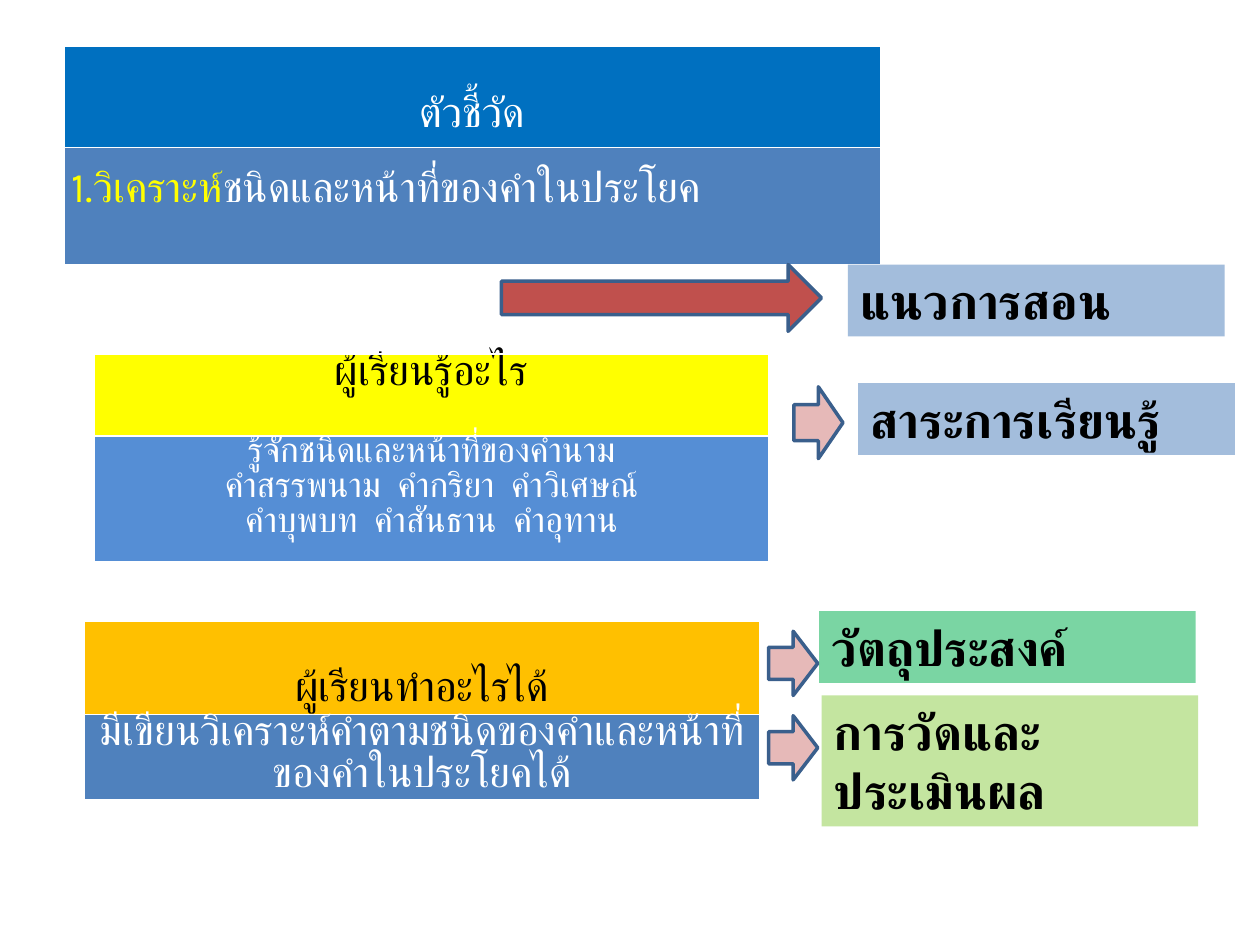
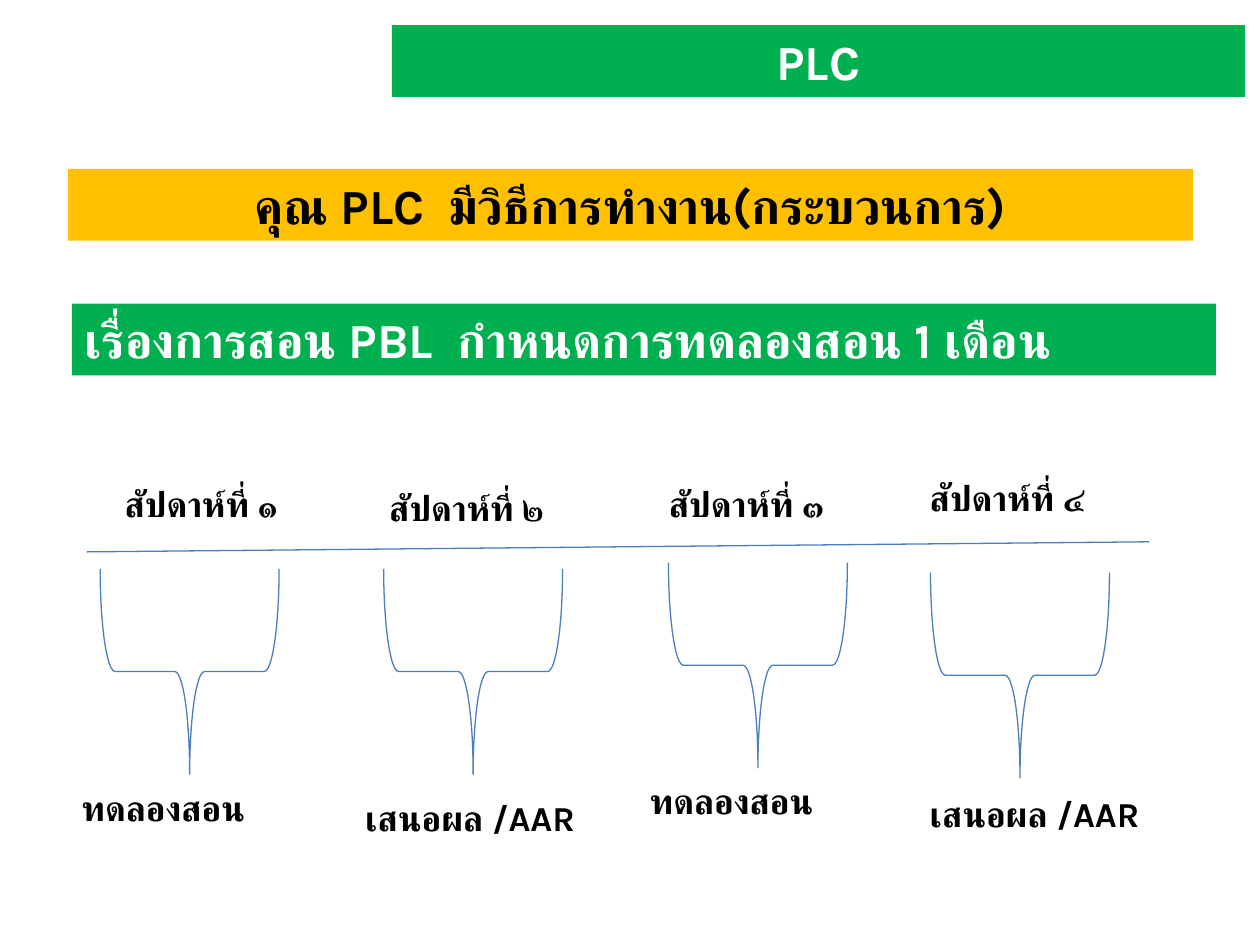
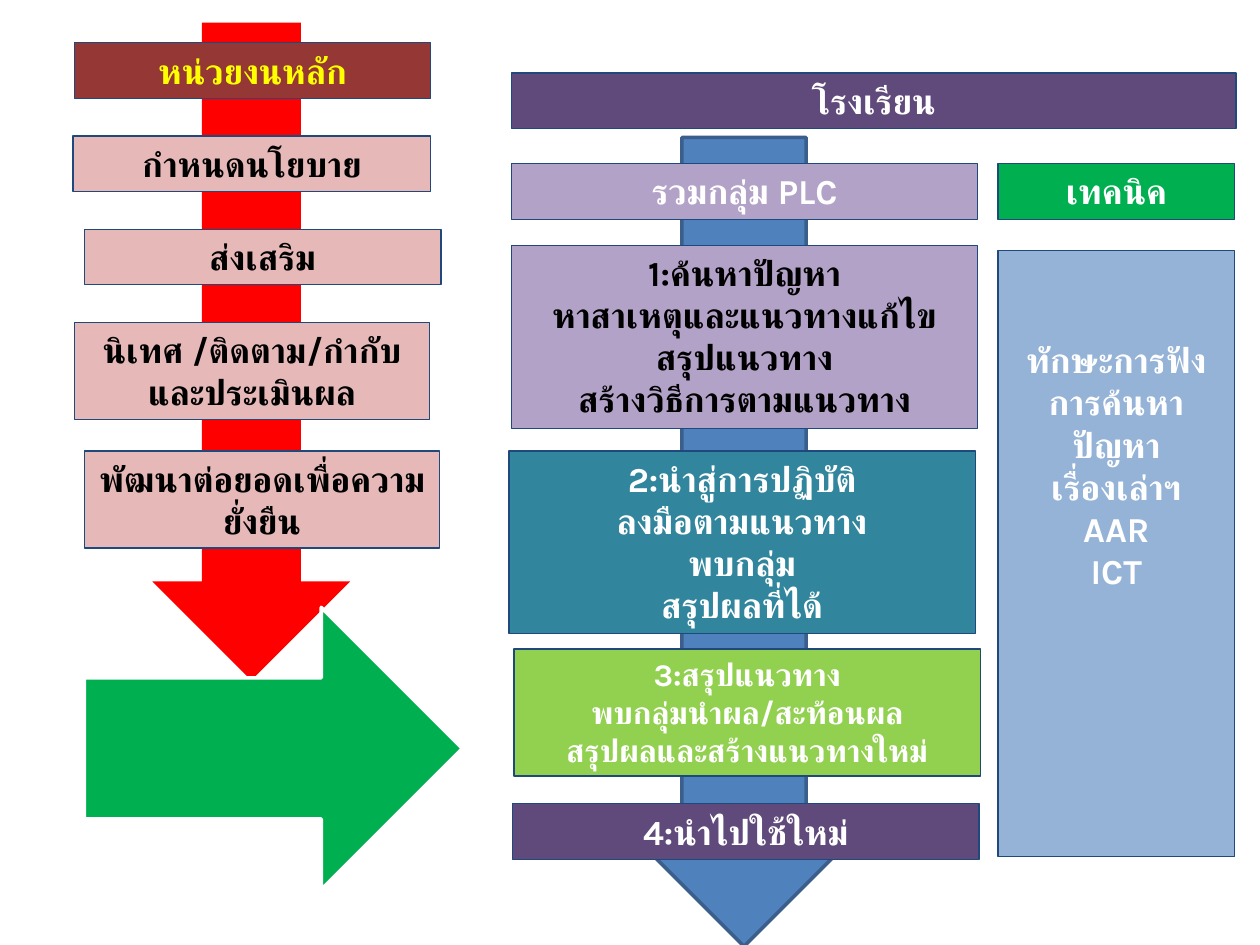
from lxml.etree import SubElement
from pptx import Presentation
from pptx.dml.color import RGBColor
from pptx.enum.shapes import MSO_CONNECTOR, MSO_SHAPE as Shape
from pptx.enum.text import MSO_ANCHOR, PP_ALIGN as Align
from pptx.oxml import parse_xml
from pptx.oxml.ns import nsdecls, qn
from pptx.util import Inches, Pt

FONT = "Karla"
WHITE, BLACK, YELLOW = "FFFFFF", "000000", "FFFF00"
BLUE, GREEN, ORANGE, LIME = "4F81BD", "00B050", "FFC000", "92D050"
PINK, PURPLE, LILAC = "E6B9B8", "604A7B", "B3A2C7"
ARROW_EDGE, BOX_EDGE, TIMELINE = "3A5F8C", "1F497D", "4B7EBC"

# Slide 1: place (left, top, width), then header and body rows
INDICATOR_TABLES = [
    ((0.51, 0.37, 6.48), [
        dict(text="ตัวชี้วัด", height=0.8, fill="0070C0", top=0.39),
        dict(text=[[("1.วิเคราะห์", YELLOW), ("ชนิดและหน้าที่ของคำในประโยค", WHITE)]],
             height=0.93, fill=BLUE, top=0.26, spacing=19, align=Align.LEFT)]),
    ((0.75, 2.81, 5.35), [
        dict(text="ผู้เรียนรู้อะไร", height=0.65, fill=YELLOW, color=BLACK),
        dict(text=["รู้จักชนิดและหน้าที่ของคำนาม",
                   "คำสรรพนาม  คำกริยา  คำวิเศษณ์\vคำบุพบท  คำสันธาน  คำอุทาน"],
             height=1, fill="558ED5", size=20)]),
    ((0.67, 4.93, 5.36), [
        dict(text="ผู้เรียนทำอะไรได้", height=0.74, fill=ORANGE, color=BLACK, top=0.39),
        dict(text="มีเขียนวิเคราะห์คำตามชนิดของคำและหน้าที่ของคำในประโยคได้",
             height=0.68, fill=BLUE)]),
]
PLAN_PARTS = [  # text, place, fill, opacity in percent
    ("สาระการเรียนรู้", (6.81, 3.04, 2.99, 0.57), BLUE, 52),
    ("วัตถุประสงค์", (6.5, 4.85, 2.99, 0.57), GREEN, 52),
    ("การวัดและประเมินผล", (6.52, 5.52, 2.99, 1.04), LIME, 54),
    ("แนวการสอน", (6.73, 2.1, 2.99, 0.57), BLUE, 52),
]
PLAN_ARROWS = [
    ((6.3, 3.07, 0.39, 0.57), PINK),
    ((6.1, 5.01, 0.39, 0.51), PINK),
    ((6.1, 5.68, 0.39, 0.51), PINK),
    ((3.98, 2.1, 2.54, 0.53), "C0504D"),
]

# Slide 2
PLC_BANDS = [
    ("PLC", (3.11, 0.2, 6.77, 0.57), GREEN, WHITE, Align.CENTER),
    ("คุณ PLC  มีวิธีการทำงาน(กระบวนการ)", (0.54, 1.34, 8.73, 0.57), ORANGE, BLACK, Align.CENTER),
    ("เรื่องการสอน PBL  กำหนดการทดลองสอน 1 เดือน", (0.57, 2.41, 9.08, 0.57), GREEN, WHITE,
     Align.LEFT),
]
PLC_BANDS[1] = (PLC_BANDS[1][0], (0.54, 1.34, 8.93, 0.57), *PLC_BANDS[1][2:])
TRIAL, REPORT = "ทดลองสอน", "เสนอผล /AAR"
WEEKS = [  # week, its (left, top), brace (left, top), activity, its (left, top)
    ("สัปดาห์ที่ ๑", (0.89, 3.78), (0.69, 4.62), TRIAL, (0.55, 6.19)),
    ("สัปดาห์ที่ ๒", (2.99, 3.81), (2.94, 4.62), REPORT, (2.8, 6.27)),
    ("สัปดาห์ที่ ๓", (5.21, 3.78), (5.2, 4.57), TRIAL, (5.06, 6.14)),
    ("สัปดาห์ที่ ๔", (7.28, 3.73), (7.28, 4.65), REPORT, (7.28, 6.24)),
]

# Slide 3: place, fill, edge
FLOW_ARROWS = [
    (Shape.DOWN_ARROW, (4.92, 1.09, 1.97, 6.42), BLUE, ARROW_EDGE),
    (Shape.DOWN_ARROW, (1.21, 0.18, 1.57, 5.22), "FF0000", None),
    (Shape.RIGHT_ARROW, (0.67, 4.82, 3, 2.24), GREEN, WHITE),
]
FLOW_BOXES = [  # text, place, fill, text format
    ("หน่วยงนหลัก", (0.59, 0.34, 2.83, 0.44), "953735", dict(color=YELLOW)),
    ("กำหนดนโยบาย", (0.58, 1.08, 2.84, 0.44), PINK, dict(color=BLACK)),
    ("ส่งเสริม", (0.67, 1.82, 2.83, 0.44), PINK, dict(color=BLACK)),
    ("นิเทศ /ติดตาม/กำกับและประเมินผล", (0.59, 2.56, 2.82, 0.77), PINK, dict(color=BLACK)),
    ("พัฒนาต่อยอดเพื่อความยั่งยืน", (0.67, 3.58, 2.82, 0.77), PINK, dict(color=BLACK)),
    ("โรงเรียน", (4.06, 0.58, 5.75, 0.44), PURPLE, {}),
    ("รวมกลุ่ม PLC", (4.06, 1.3, 3.7, 0.44), LILAC, {}),
    (["1:ค้นหาปัญหา", "หาสาเหตุและแนวทางแก้ไข", "สรุปแนวทาง\vสร้างวิธีการตามแนวทาง"],
     (4.06, 1.95, 3.7, 1.45), LILAC, dict(color=BLACK)),
    (["2:นำสู่การปฏิบัติ", "ลงมือตามแนวทาง\vพบกลุ่ม\vสรุปผลที่ได้"],
     (4.04, 3.58, 3.7, 1.45), "31859C", {}),
    ("3:สรุปแนวทาง\vพบกลุ่มนำผล/สะท้อนผล\vสรุปผลและสร้างแนวทางใหม่",
     (4.08, 5.15, 3.7, 1.01), LIME, dict(size=18)),
    ("4:นำไปใช้ใหม่", (4.07, 6.38, 3.7, 0.44), PURPLE, {}),
    ("เทคนิค", (7.92, 1.3, 1.88, 0.44), GREEN, {}),
    (["ทักษะการฟัง", "การค้นหาปัญหา\vเรื่องเล่าฯ", "AAR", "ICT"],
     (7.92, 1.99, 1.88, 4.81), "95B3D7", dict(top=0.7)),
]


def rgb(color):
    return RGBColor.from_string(color)


def inches(values):
    return [Inches(value) for value in values]


def write(frame, text, size=20, color=WHITE, bold=True, align=Align.CENTER, spacing=None):
    """Fill a frame from a string or a list of paragraphs; a paragraph may be (text, colour) spans."""
    frame.word_wrap = True
    for index, content in enumerate([text] if isinstance(text, str) else text):
        para = frame.add_paragraph() if index else frame.paragraphs[0]
        para.alignment = align
        if spacing:
            para.line_spacing = Pt(spacing)
        if isinstance(content, str):
            para.text = content
            colors = [color] * len(para.runs)
        else:
            for words, _ in content:
                para.add_run().text = words
            colors = [span_color for _, span_color in content]
        for span, span_color in zip(para.runs, colors):
            span.font.name, span.font.size, span.font.bold = FONT, Pt(size), bold
            span.font.color.rgb = rgb(span_color)
            SubElement(span.font._element, qn("a:cs"), typeface=FONT)


def add_shape(slide, kind, place, fill=None, edge=None, edge_width=2, opacity=None):
    shape = slide.shapes.add_shape(kind, *inches(place))
    shape.shadow.inherit = False
    if fill:
        shape.fill.solid()
        shape.fill.fore_color.rgb = rgb(fill)
    else:
        shape.fill.background()
    if opacity:
        solid = shape._element.spPr.find(qn("a:solidFill"))
        SubElement(solid[0], qn("a:alpha"), val=str(opacity * 1000))
    if edge:
        shape.line.color.rgb = rgb(edge)
        shape.line.width = Pt(edge_width)
    else:
        shape.line.fill.background()
    return shape


def add_box(slide, text, place, fill, edge=None, opacity=None, top=0.05, **style):
    box = add_shape(slide, Shape.RECTANGLE, place, fill, edge, 0.75, opacity)
    box.text_frame.vertical_anchor = MSO_ANCHOR.TOP
    box.text_frame.margin_top = Inches(top)
    write(box.text_frame, text, **style)


def add_label(slide, text, corner, width):
    label = slide.shapes.add_textbox(*inches((*corner, width, 0.44)))
    write(label.text_frame, text, color=BLACK, align=Align.LEFT)


def format_cell(cell, text, height, fill, top=0, size=24, spacing=None, edge="lnT", **style):
    cell.fill.solid()
    cell.fill.fore_color.rgb = rgb(fill)
    cell.margin_left = cell.margin_right = Inches(0.06)
    cell.margin_top, cell.margin_bottom = Inches(top), 0
    write(cell.text_frame, text, size=size, bold=False, spacing=spacing or size, **style)
    cell._tc.get_or_add_tcPr().insert(0, parse_xml(
        f'<a:{edge} {nsdecls("a")} w="12700"><a:solidFill><a:srgbClr val="{WHITE}"/>'
        f'</a:solidFill></a:{edge}>'))


def add_indicator_table(slide, place, rows):
    height = sum(row["height"] for row in rows)
    table = slide.shapes.add_table(len(rows), 1, *inches((*place, height))).table
    for index, row in enumerate(rows):
        table.rows[index].height = Inches(row["height"])
        format_cell(table.cell(index, 0), edge="lnT" if index else "lnB", **row)


def build_indicators(slide):
    for place, rows in INDICATOR_TABLES:
        add_indicator_table(slide, place, rows)
    for text, place, fill, opacity in PLAN_PARTS:
        add_box(slide, text, place, fill, opacity=opacity, size=28, color=BLACK, align=Align.LEFT)
    for place, fill in PLAN_ARROWS:
        add_shape(slide, Shape.RIGHT_ARROW, place, fill, ARROW_EDGE)


def build_timeline(slide):
    for text, place, fill, color, align in PLC_BANDS:
        add_box(slide, text, place, fill, size=28, color=color, align=align)
    line = slide.shapes.add_connector(MSO_CONNECTOR.STRAIGHT, *inches((0.69, 4.38, 9.12, 4.3)))
    line.line.color.rgb = rgb(TIMELINE)
    line.line.width = Pt(0.75)
    SubElement(line._element.spPr, qn("a:effectLst"))
    for week, week_corner, brace_corner, activity, activity_corner in WEEKS:
        add_label(slide, week, week_corner, 1.62)
        brace = add_shape(slide, Shape.RIGHT_BRACE, (*brace_corner, 1.63, 1.42),
                          edge=TIMELINE, edge_width=0.75)
        brace.rotation = 90
        add_label(slide, activity, activity_corner, 1.66 if activity == TRIAL else 2.07)


def build_flow(slide):
    for kind, place, fill, edge in FLOW_ARROWS:
        add_shape(slide, kind, place, fill, edge)
    for text, place, fill, style in FLOW_BOXES:
        add_box(slide, text, place, fill, BOX_EDGE, **style)


def main():
    deck = Presentation()
    deck.slide_width, deck.slide_height = inches((10, 7.5))
    for build in (build_indicators, build_timeline, build_flow):
        build(deck.slides.add_slide(deck.slide_layouts[6]))
    deck.save("out.pptx")


if __name__ == "__main__":
    main()
